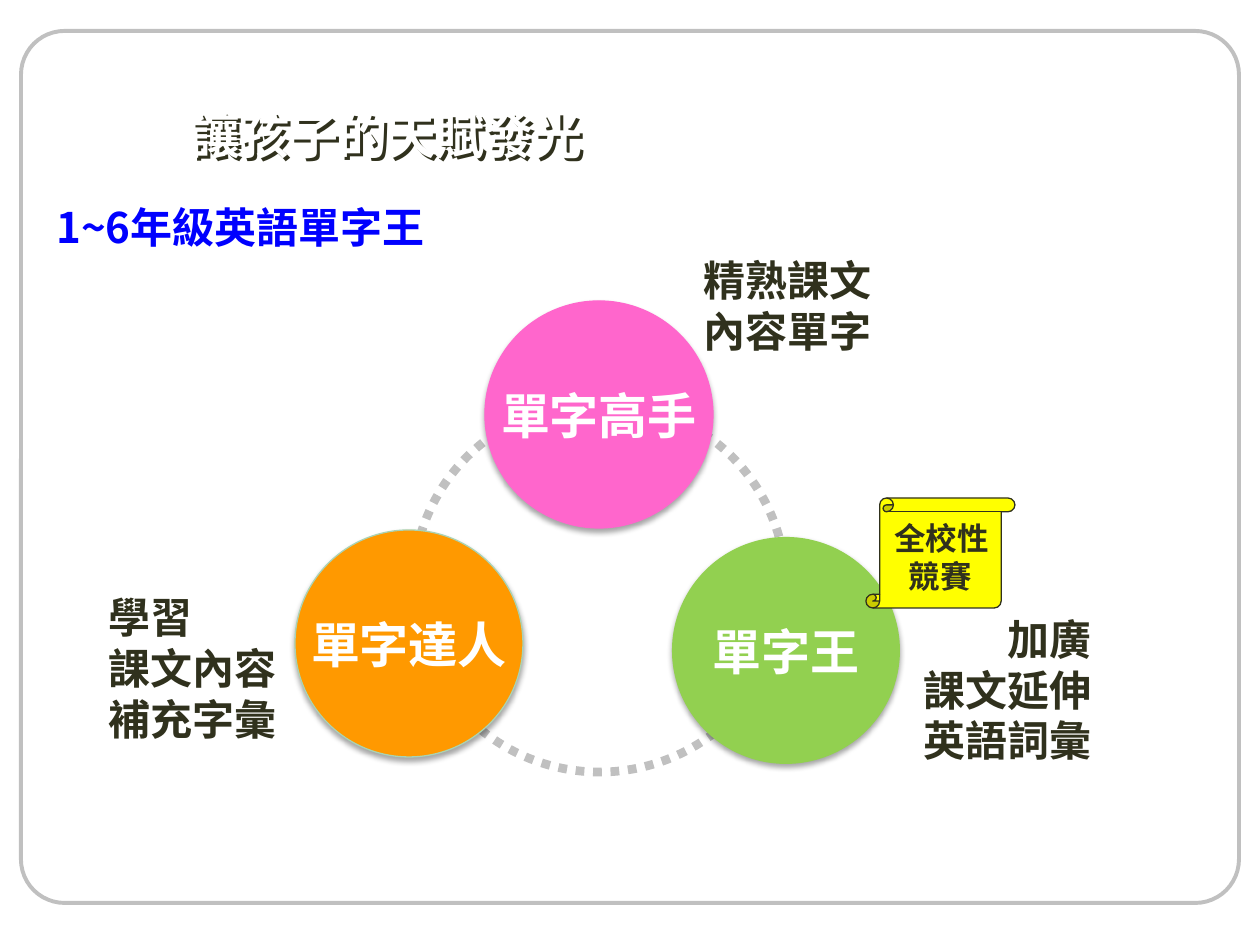
from lxml.etree import SubElement
from pptx import Presentation
from pptx.dml.color import RGBColor
from pptx.enum.dml import MSO_LINE
from pptx.enum.shapes import MSO_SHAPE
from pptx.enum.text import MSO_ANCHOR, PP_ALIGN
from pptx.oxml.ns import qn
from pptx.util import Emu, Pt

SCALE = 914400 / 126
CJK = "Noto Sans CJK SC"
WHITE = RGBColor(0xFF, 0xFF, 0xFF)
BLACK = RGBColor(0x00, 0x00, 0x00)
DARK = RGBColor(0x30, 0x31, 0x1D)
GRAY = RGBColor(0xC0, 0xC0, 0xC0)
BLUE = RGBColor(0x00, 0x00, 0xFF)
PINK = RGBColor(0xFF, 0x66, 0xCC)
GREEN = RGBColor(0x92, 0xD0, 0x50)
ORANGE = RGBColor(0xFF, 0x99, 0x00)
MINT = RGBColor(0xAA, 0xD3, 0xB3)
YELLOW = RGBColor(0xFF, 0xFF, 0x00)
LEFT, MID, RIGHT = PP_ALIGN.LEFT, PP_ALIGN.CENTER, PP_ALIGN.RIGHT


def px(*values):
    return [Emu(round(v * SCALE)) for v in values]


def add_shadow(shape, color, alpha, blur, dist, angle):
    shape.shadow.inherit = False
    effects = shape._element.spPr.find(qn("a:effectLst"))
    shade = SubElement(effects, qn("a:outerShdw"), blurRad=str(Pt(blur)),
                       dist=str(Pt(dist)), dir=str(angle * 60000),
                       algn="ctr", rotWithShape="0")
    tint = SubElement(shade, qn("a:srgbClr"), val=str(color))
    SubElement(tint, qn("a:alpha"), val=str(alpha * 1000))


def add_run(para, text, size, color, font):
    run = para.add_run()
    run.text = text
    run.font.size = Pt(size)
    run.font.bold = True
    run.font.color.rgb = color
    run.font.name = font
    latin = run.font._element.find(qn("a:latin"))
    east = SubElement(run.font._element, qn("a:ea"), typeface=CJK)
    latin.addnext(east)


def write(shape, lines, size, color=DARK, font="Arial", anchor=MSO_ANCHOR.TOP,
          wrap=True):
    """Fill a shape with (text, alignment) lines."""
    frame = shape.text_frame
    frame.word_wrap = wrap
    frame.vertical_anchor = anchor
    for i, (text, align) in enumerate(lines):
        para = frame.add_paragraph() if i else frame.paragraphs[0]
        para.alignment = align
        if anchor == MSO_ANCHOR.TOP:
            para.line_spacing = Pt(round(size * 1.21))
        add_run(para, text, size, color, font)


def add_label(slide, box, lines, size=24, **style):
    label = slide.shapes.add_textbox(*px(*box))
    write(label, lines, size, **style)
    return label


def add_form(slide, kind, box, fill=None, line=None, width=0.75):
    shape = slide.shapes.add_shape(kind, *px(*box))
    shape.shadow.inherit = False
    if fill is None:
        shape.fill.background()
    else:
        shape.fill.solid()
        shape.fill.fore_color.rgb = fill
    if line is None:
        shape.line.fill.background()
    else:
        shape.line.color.rgb = line
        shape.line.width = Pt(width)
    return shape


def add_disc(slide, left, top, text, fill, line):
    disc = add_form(slide, MSO_SHAPE.OVAL, (left, top, 228, 227), fill, line)
    add_shadow(disc, BLACK, 35, 3.1, 1.8, 90)
    write(disc, [(text, MID)], 28, WHITE, anchor=MSO_ANCHOR.MIDDLE, wrap=False)


def add_title(slide):
    # The box has no fill, so its shadow falls from the letters
    title = add_label(slide, (179, 98, 1008, 73), [("讓孩子的天賦發光", LEFT)],
                      28, color=WHITE, font="DejaVu Sans",
                      anchor=MSO_ANCHOR.MIDDLE)
    add_shadow(title, DARK, 100, 0, 2.4, 45)


def main():
    deck = Presentation()
    deck.slide_width, deck.slide_height = px(1260, 945)
    slide = deck.slides.add_slide(deck.slide_layouts[6])

    # Frame and headings
    frame = add_form(slide, MSO_SHAPE.ROUNDED_RECTANGLE, (21, 31, 1218, 872),
                     line=GRAY, width=2.25)
    frame.adjustments[0] = 0.05
    add_title(slide)
    add_label(slide, (44, 195, 761, 127), [("1~6年級英語單字王", LEFT)],
              color=BLUE, font=CJK)

    # Dotted ring with three discs
    ring = add_form(slide, MSO_SHAPE.OVAL, (413, 402, 373, 370),
                    line=GRAY, width=5)
    ring.line.dash_style = MSO_LINE.ROUND_DOT
    for disc in (
        (485, 301, "單字高手", PINK, PINK),
        (672, 537, "單字王", GREEN, None),
        (295, 530, "單字達人", ORANGE, MINT),
    ):
        add_disc(slide, *disc)

    # Notes beside the discs
    for box, align, lines in (
        ((616, 248, 268, 115), RIGHT, ("精熟課文", "內容單字")),
        ((766, 607, 338, 165), RIGHT, ("加廣", "課文延伸", "英語詞彙")),
        ((96, 585, 329, 165), LEFT, ("學習", "課文內容", "補充字彙")),
    ):
        add_label(slide, box, [(text, align) for text in lines])

    # Contest scroll
    scroll = add_form(slide, MSO_SHAPE.VERTICAL_SCROLL, (866, 498, 149, 110),
                      YELLOW, DARK)
    write(scroll, [("全校性", RIGHT), ("競賽", MID)], 18)

    deck.save("out.pptx")


if __name__ == "__main__":
    main()
